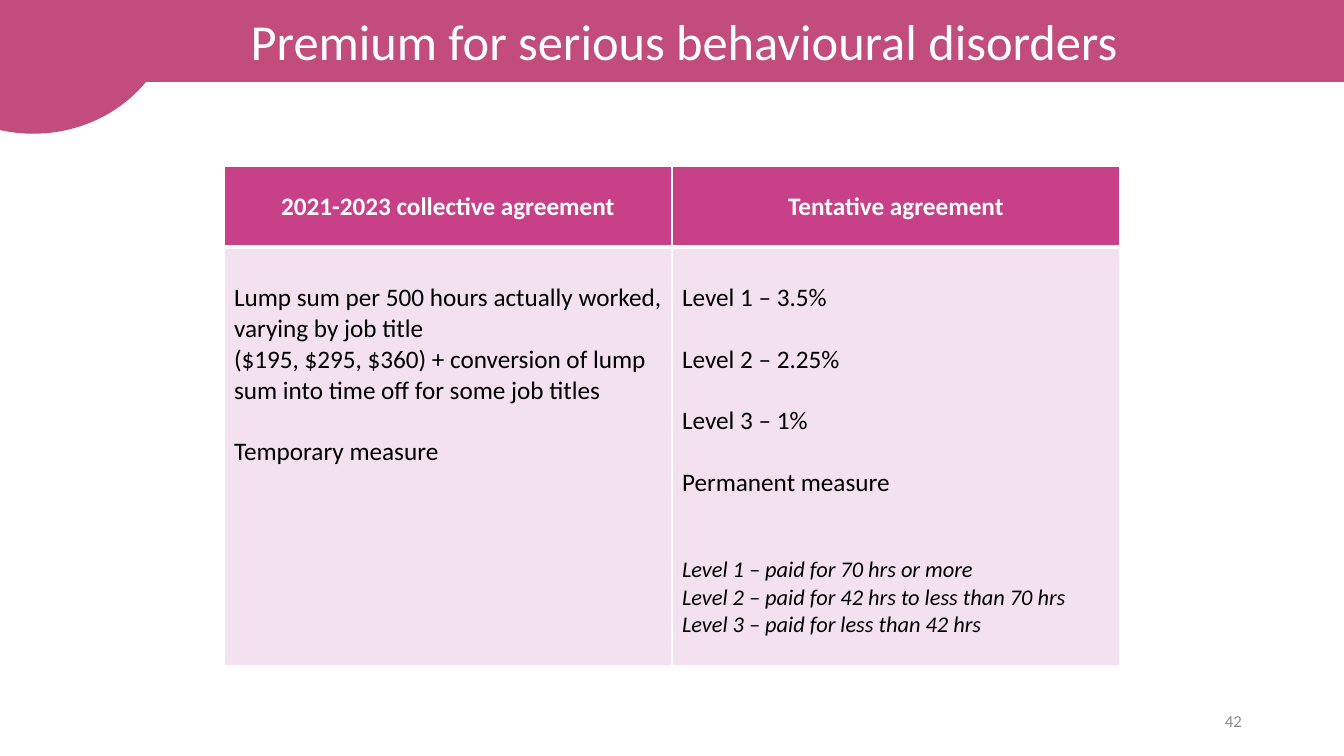
import lxml.etree
import pptx
import pptx.dml.color
import pptx.enum.shapes
import pptx.enum.text
import pptx.oxml.ns
import pptx.util

Pt = pptx.util.Pt
RGBColor = pptx.dml.color.RGBColor
ALIGN = pptx.enum.text.PP_ALIGN
MIDDLE = pptx.enum.text.MSO_ANCHOR.MIDDLE
ROSE = RGBColor(0xC2, 0x4C, 0x7B)
PINK = RGBColor(0xC8, 0x40, 0x87)
PALE = RGBColor(0xF3, 0xE1, 0xEF)
WHITE = RGBColor(0xFF, 0xFF, 0xFF)
BLACK = RGBColor(0, 0, 0)
GREY = RGBColor(0x8C, 0x8C, 0x8C)
LINE = 22
NOTE = {"size": 16, "italic": True}
HEADS = ["2021-2023 collective agreement", "Tentative agreement"]
BODIES = [
    [
        ("Lump sum per 500 hours actually worked, varying by job title", {}),
        ("($195, $295, $360) + conversion of lump sum into time off for some job titles", {}),
        ("Temporary measure", {"gap": LINE}),
    ],
    [
        ("Level 1 – 3.5%", {}),
        ("Level 2 – 2.25%", {"gap": LINE}),
        ("Level 3 – 1%", {"gap": LINE}),
        ("Permanent measure", {"gap": LINE}),
        ("Level 1 – paid for 70 hrs or more", {"gap": 41.5, **NOTE}),
        ("Level 2 – paid for 42 hrs to less than 70 hrs", NOTE),
        ("Level 3 – paid for less than 42 hrs", NOTE),
    ],
]


def write(para, text, size=18, color=BLACK, bold=False, italic=False,
          align=ALIGN.LEFT, gap=0):
    para.alignment = align
    para.space_before = Pt(gap)
    run = para.add_run()
    run.text = text
    font = run.font
    font.name, font.size = "Calibri", Pt(size)
    font.bold, font.italic = bold, italic
    font.color.rgb = color


def place(shape, left, top, width, height):
    shape.left, shape.top = Pt(left), Pt(top)
    shape.width, shape.height = Pt(width), Pt(height)


def paint(shape, color):
    shape.fill.solid()
    shape.fill.fore_color.rgb = color
    shape.line.color.rgb = color
    shape.line.width = Pt(1)


def add_title(slide, text):
    title = slide.shapes.title
    place(title, 0, 0, 977.76, 58.32)
    paint(title, ROSE)
    title.text_frame.vertical_anchor = MIDDLE
    write(title.text_frame.paragraphs[0], text, size=36, color=WHITE, align=ALIGN.CENTER)


def add_disc(slide):
    oval = pptx.enum.shapes.MSO_SHAPE.OVAL
    disc = slide.shapes.add_shape(oval, Pt(-77.76), Pt(-95.76), Pt(203.04), Pt(190.8))
    disc.shadow.inherit = False
    paint(disc, ROSE)


def add_number(slide, text):
    box = slide.shapes.add_textbox(Pt(678.24), Pt(500.4), Pt(216), Pt(28.8))
    box.text_frame.word_wrap = True
    box.text_frame.vertical_anchor = MIDDLE
    write(box.text_frame.paragraphs[0], text, size=12, color=GREY, align=ALIGN.RIGHT)


def add_edges(cell, top=1, bottom=1):
    qn = pptx.oxml.ns.qn
    props = cell._tc.get_or_add_tcPr()
    widths = {"a:lnL": 1, "a:lnR": 1, "a:lnT": top, "a:lnB": bottom}
    for spot, (tag, width) in enumerate(widths.items()):
        edge = lxml.etree.Element(qn(tag), w=str(Pt(width)))
        fill = lxml.etree.SubElement(edge, qn("a:solidFill"))
        lxml.etree.SubElement(fill, qn("a:srgbClr"), val=str(WHITE))
        props.insert(spot, edge)


def fill_cell(cell, color):
    cell.fill.solid()
    cell.fill.fore_color.rgb = color


def add_grid(slide):
    frame = slide.shapes.add_table(2, 2, Pt(160), Pt(118.8), Pt(640), Pt(356.4))
    table = frame.table
    table.rows[0].height, table.rows[1].height = Pt(57.6), Pt(298.8)
    for col, (head, body) in enumerate(zip(HEADS, BODIES)):
        cell = table.cell(0, col)
        fill_cell(cell, PINK)
        add_edges(cell, bottom=3)
        cell.vertical_anchor = MIDDLE
        write(cell.text_frame.paragraphs[0], head, color=WHITE, bold=True, align=ALIGN.CENTER)
        cell = table.cell(1, col)
        fill_cell(cell, PALE)
        add_edges(cell, top=3)
        cell.margin_top = Pt(3.6 + LINE)
        text = cell.text_frame
        for row, (line, form) in enumerate(body):
            write(text.add_paragraph() if row else text.paragraphs[0], line, **form)


def main():
    """Build the slide that compares the two agreements."""
    deck = pptx.Presentation()
    deck.slide_width, deck.slide_height = Pt(960), Pt(540)
    slide = deck.slides.add_slide(deck.slide_layouts.get_by_name("Title Only"))
    add_title(slide, "Premium for serious behavioural disorders")
    add_disc(slide)
    add_number(slide, "42")
    add_grid(slide)
    deck.save("out.pptx")


if __name__ == "__main__":
    main()
